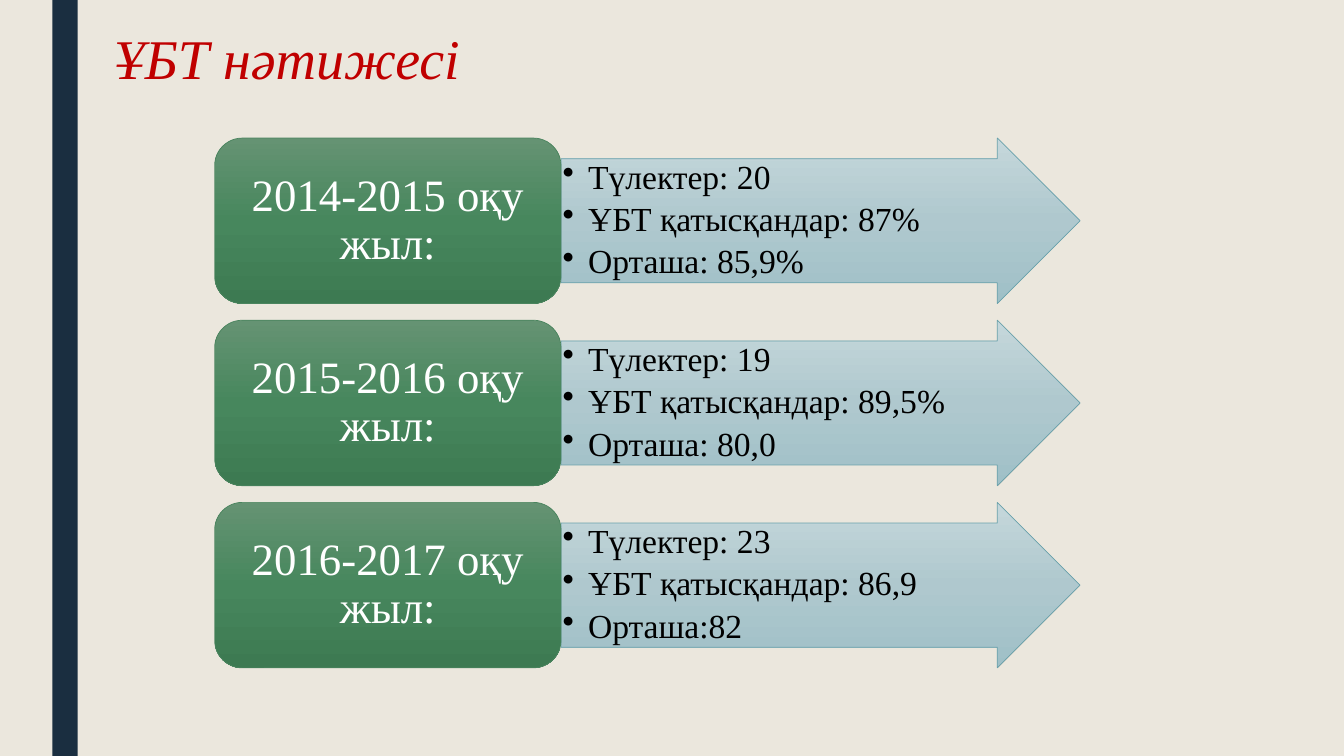
import copy
from dataclasses import dataclass

import pptx
import pptx.dml.color
import pptx.enum.shapes
import pptx.enum.text
import pptx.oxml
import pptx.oxml.ns
import pptx.util

Cm = pptx.util.Cm
Pt = pptx.util.Pt
RGB = pptx.dml.color.RGBColor.from_string
SHAPE = pptx.enum.shapes.MSO_SHAPE
ALIGN = pptx.enum.text.PP_ALIGN
ANCHOR = pptx.enum.text.MSO_ANCHOR
qn = pptx.oxml.ns.qn


@dataclass(frozen=True)
class Theme:
    font: str = "Times New Roman"
    background: str = "EBE7DD"
    bar: str = "1A2E40"
    title: str = "C00000"
    year_text: str = "FFFFFF"
    result_text: str = "000000"
    year_fill: tuple = ("659373", "47875D", "3D7A52")
    year_line: str = "4A845E"
    result_fill: tuple = ("C5D7DB", "AFC8CE", "9FC0C7")
    result_line: str = "69A1AB"
    title_size: int = 40
    year_size: int = 32
    result_size: int = 24


THEME = Theme()
ROW_TOP, ROW_HEIGHT, ROW_PITCH = 3.48, 4.17, 4.59
YEAR_LEFT, YEAR_WIDTH = 5.41, 8.73
RESULT_LEFT, RESULT_WIDTH = YEAR_LEFT + YEAR_WIDTH, 13.08

RESULTS = [
    ("2014-2015 оқу жыл:",
     ["Түлектер: 20", "ҰБТ қатысқандар: 87%", "Орташа: 85,9%"]),
    ("2015-2016 оқу жыл:",
     ["Түлектер: 19", "ҰБТ қатысқандар: 89,5%", "Орташа: 80,0"]),
    ("2016-2017 оқу жыл:",
     ["Түлектер: 23", "ҰБТ қатысқандар: 86,9", "Орташа:82"]),
]


def format_runs(p, size, color, italic=False):
    for r in p.runs:
        r.font.name = THEME.font
        r.font.size = Pt(size)
        r.font.italic = italic
        r.font.color.rgb = RGB(color)


def set_insets(tf, horizontal, vertical):
    tf.margin_left = tf.margin_right = Cm(horizontal)
    tf.margin_top = tf.margin_bottom = Cm(vertical)


def fill_gradient(sp, colors):
    sp.fill.gradient()
    sp.fill.gradient_angle = 270
    stop_list = next(sp._element.spPr.iter(qn("a:gsLst")))
    stop_list.append(copy.deepcopy(stop_list[0]))
    for i, (stop, color) in enumerate(zip(sp.fill.gradient_stops, colors)):
        stop.position = i / (len(colors) - 1)
        stop.color.rgb = RGB(color)


def add_bullet(p):
    pPr = p._p.get_or_add_pPr()
    pPr.set("marL", str(Cm(0.64)))
    pPr.set("indent", str(-Cm(0.64)))
    bullet = pptx.oxml.parse_xml(
        f'<a:buChar {pptx.oxml.ns.nsdecls("a")} char="•"/>')
    pPr.append(bullet)


def add_block(s, preset, left, top, width, colors, line):
    sp = s.shapes.add_shape(
        preset, Cm(left), Cm(top), Cm(width), Cm(ROW_HEIGHT))
    sp.shadow.inherit = False
    fill_gradient(sp, colors)
    sp.line.color.rgb = RGB(line)
    sp.line.width = Pt(0.5)
    sp.text_frame.word_wrap = True
    return sp


def add_result_arrow(s, top, lines):
    sp = add_block(s, SHAPE.RIGHT_ARROW, RESULT_LEFT, top, RESULT_WIDTH,
                   THEME.result_fill, THEME.result_line)
    sp.adjustments[0] = 0.75
    sp.adjustments[1] = 0.5
    tf = sp.text_frame
    set_insets(tf, 0.04, 0.04)
    tf.vertical_anchor = ANCHOR.TOP
    tf.text = "\n".join(lines)
    for p in tf.paragraphs:
        p.alignment = ALIGN.LEFT
        p.line_spacing = 0.9
        p.space_after = Pt(4.3)
        add_bullet(p)
        format_runs(p, THEME.result_size, THEME.result_text)


def add_year_box(s, top, year):
    sp = add_block(s, SHAPE.ROUNDED_RECTANGLE, YEAR_LEFT, top, YEAR_WIDTH,
                   THEME.year_fill, THEME.year_line)
    tf = sp.text_frame
    set_insets(tf, 0.34, 0.17)
    tf.vertical_anchor = ANCHOR.MIDDLE
    tf.text = year
    p = tf.paragraphs[0]
    p.alignment = ALIGN.CENTER
    p.line_spacing = 0.9
    format_runs(p, THEME.year_size, THEME.year_text)


def add_side_bar(s, height):
    sp = s.shapes.add_shape(SHAPE.RECTANGLE, Cm(1.32), 0, Cm(0.64), height)
    sp.shadow.inherit = False
    sp.fill.solid()
    sp.fill.fore_color.rgb = RGB(THEME.bar)
    sp.line.fill.background()


def add_title(s, text):
    sp = s.shapes.add_textbox(Cm(2.62), Cm(0.46), Cm(9.32), Cm(1.96))
    tf = sp.text_frame
    tf.word_wrap = False
    tf.auto_size = pptx.enum.text.MSO_AUTO_SIZE.SHAPE_TO_FIT_TEXT
    tf.text = text
    format_runs(tf.paragraphs[0], THEME.title_size, THEME.title, italic=True)


def main():
    prs = pptx.Presentation()
    prs.slide_width = Cm(33.87)
    prs.slide_height = Cm(19.05)
    s = prs.slides.add_slide(prs.slide_layouts[6])
    s.background.fill.solid()
    s.background.fill.fore_color.rgb = RGB(THEME.background)
    add_side_bar(s, prs.slide_height)
    for i, (year, lines) in enumerate(RESULTS):
        top = ROW_TOP + i * ROW_PITCH
        add_result_arrow(s, top, lines)
        add_year_box(s, top, year)
    add_title(s, "ҰБТ нәтижесі")
    prs.save("out.pptx")


if __name__ == "__main__":
    main()
